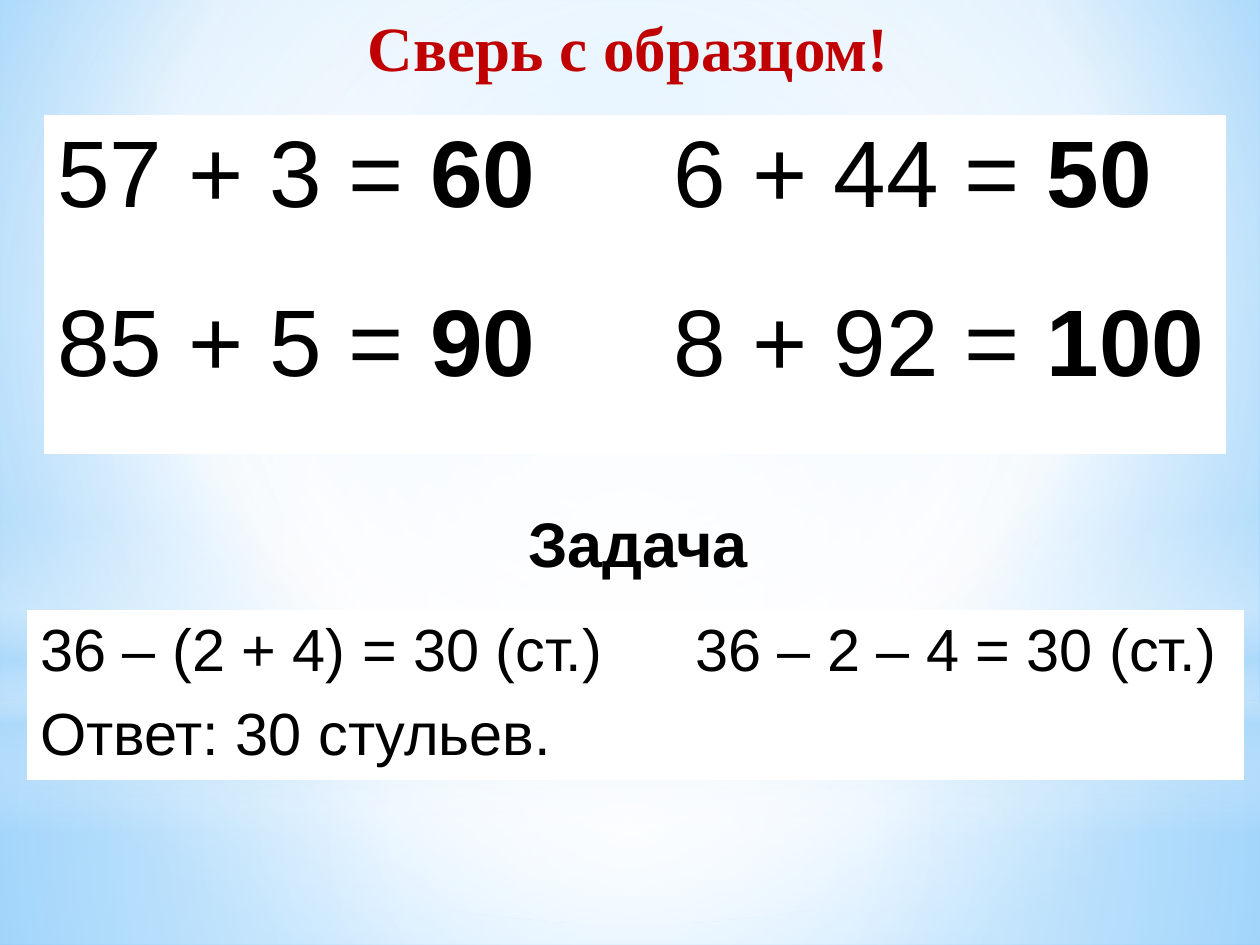
from lxml import etree
from pptx import Presentation
from pptx import util as u
from pptx.dml.color import RGBColor
from pptx.enum import shapes, text
from pptx.oxml import ns

RED = RGBColor(0xC0, 0, 0)
BLACK = RGBColor(0, 0, 0)
WHITE = RGBColor(255, 255, 255)
SKY = RGBColor(0xB4, 0xDC, 0xFA)
PALE = RGBColor(0x9E, 0xD5, 0xFF)
BLUE = RGBColor(0x5B, 0xB9, 0xFF)
MID = (50, 50, 50, 50)


def grade(fill, root, stops, focus=None):
    """Fill with (place, colour, opacity) stops: round a focus, or downwards."""
    fill.gradient()
    grad = root.find(".//" + ns.qn("a:gradFill"))
    for kid in list(grad):
        grad.remove(kid)

    def add(up, tag, **attrs):
        return etree.SubElement(up, ns.qn("a:" + tag),
                                {k: str(v) for k, v in attrs.items()})

    row = add(grad, "gsLst")
    for place, tint, alpha in stops:
        stop = add(row, "gs", pos=place * 1000)
        add(add(stop, "srgbClr", val=tint), "alpha", val=alpha * 1000)
    if focus:
        way = add(grad, "path", path="circle")
        add(way, "fillToRect", **{k: v * 1000 for k, v in zip("ltrb", focus)})
    else:
        add(grad, "lin", ang=5400000, scaled=0)


def write(para, words, size=36, font="Arial", tint=BLACK, bold=False):
    run = para.add_run()
    run.text = words
    run.font.size = u.Pt(size)
    run.font.name = font
    run.font.bold = bold
    run.font.color.rgb = tint


class Page:
    def __init__(self, deck):
        self.slide = deck.slides.add_slide(deck.slide_layouts[6])
        self.items = self.slide.shapes

    def back(self, stops, focus):
        grade(self.slide.background.fill, self.slide.element, stops, focus)

    def glow(self, kind, top, high, stops, focus=None):
        """Full-width shape with a soft gradient."""
        item = self.items.add_shape(kind, 0, u.Cm(top), u.Cm(25.4), u.Cm(high))
        item.shadow.inherit = False
        item.line.fill.background()
        grade(item.fill, item.element, stops, focus)

    def head(self, words, left, top, **style):
        box = self.items.add_textbox(u.Cm(left), u.Cm(top), u.Cm(25.2), u.Cm(2.41))
        frame = box.text_frame
        frame.word_wrap = True
        frame.margin_left = u.Cm(0.38)
        frame.margin_top = u.Cm(0.25)
        para = frame.paragraphs[0]
        para.alignment = text.PP_ALIGN.CENTER
        write(para, words, bold=True, **style)

    def table(self, left, top, cols, high, rows, size):
        """Cells are lists of text parts; the second part is bold."""
        grid = self.items.add_table(len(rows), len(cols), u.Cm(left), u.Cm(top),
                                    u.Cm(sum(cols)), u.Cm(high * len(rows))).table
        grid.first_row = grid.horz_banding = False
        for col, wide in zip(grid.columns, cols):
            col.width = u.Cm(wide)
        for r, row in enumerate(rows):
            for c in range(len(cols)):
                cell = grid.cell(r, c)
                cell.fill.solid()
                cell.fill.fore_color.rgb = WHITE
                if c < len(row):
                    para = cell.text_frame.paragraphs[0]
                    for n, part in enumerate(row[c]):
                        write(para, part, size, bold=n == 1)
            if len(row) < len(cols):
                grid.cell(r, len(row) - 1).merge(grid.cell(r, len(cols) - 1))


def main():
    deck = Presentation()
    deck.slide_width, deck.slide_height = u.Cm(25.4), u.Cm(19.05)
    page = Page(deck)
    rect, oval = shapes.MSO_SHAPE.RECTANGLE, shapes.MSO_SHAPE.OVAL

    page.back([(0, PALE, 100), (60, WHITE, 100), (100, BLUE, 100)],
              (20, 10, 20, 60))
    page.glow(rect, 14.17, 4.88,
              [(0, WHITE, 91), (37, WHITE, 76), (100, SKY, 79)], MID)
    page.glow(rect, 0, 14.17,
              [(0, WHITE, 89), (48, WHITE, 62), (100, SKY, 79)], MID)
    page.glow(rect, 10.46, 6.35,
              [(0, WHITE, 0), (29, WHITE, 30), (45, SKY, 40),
               (55, WHITE, 26), (65, SKY, 60), (100, WHITE, 0)])
    page.glow(oval, 4.45, 14.17, [(0, WHITE, 100), (56, WHITE, 0)], MID)

    page.head("Сверь с образцом!", 0, -0.08, font="Times New Roman", tint=RED)
    page.table(0.9, 2.33, [11.9, 11.9], 3.4,
               [[["57 + 3 = ", "60"], [" 6 + 44 = ", "50"]],
                [["85 + 5 = ", "90"], [" 8 + 92 = ", "100"]]], 54)
    page.head("Задача", 0.2, 9.93)
    page.table(0.56, 12.32, [13.2, 11.3], 1.6,
               [[["36 – (2 + 4) = 30 (ст.)"], ["36 – 2 – 4 = 30 (ст.)"]],
                [["Ответ: 30 стульев."]]], 34)
    deck.save("out.pptx")


if __name__ == "__main__":
    main()
